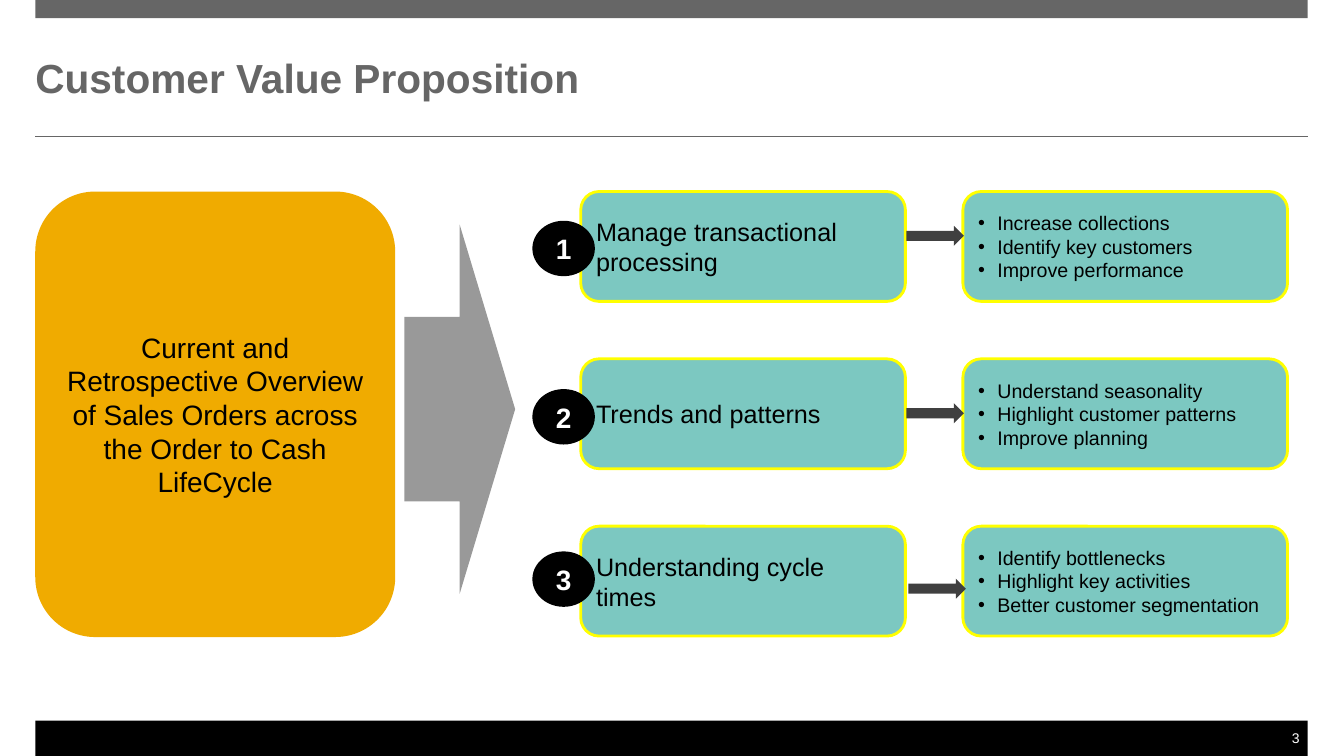
from dataclasses import dataclass

from lxml.etree import SubElement
from pptx import Presentation
from pptx.dml.color import RGBColor
from pptx.enum.shapes import MSO_CONNECTOR, MSO_SHAPE
from pptx.enum.text import MSO_ANCHOR, PP_ALIGN
from pptx.oxml.ns import qn
from pptx.shapes.autoshape import Shape
from pptx.slide import Slide
from pptx.util import Inches, Pt

GREY, BLACK, WHITE = "666666", "000000", "FFFFFF"
ORANGE, TEAL, YELLOW = "F0AB00", "7CC8C1", "FFFF00"
ARROW_GREY, DARK_GREY = "999999", "404040"

MARGIN_LEFT, CONTENT_WIDTH = 0.35, 12.62
FIRST_ROW_TOP, ROW_STEP = 1.9, 1.66
BOX_WIDTH, BOX_HEIGHT = 3.22, 1.09
TOPIC_LEFT, BENEFIT_LEFT = 5.76, 9.55
BULLET_INDENT = 0.19


@dataclass(frozen=True)
class Box:
    left: float
    top: float
    width: float
    height: float

    def lengths(self) -> list[int]:
        return [Inches(value) for value in (self.left, self.top, self.width, self.height)]


@dataclass(frozen=True)
class TextStyle:
    size: float
    color: str = BLACK
    bold: bool = False
    alignment: PP_ALIGN = PP_ALIGN.LEFT
    bulleted: bool = False


@dataclass(frozen=True)
class Proposition:
    topic: str
    benefits: tuple[str, ...]
    badge_top: float
    arrow_left: float
    arrow_top: float


PROPOSITIONS = (
    Proposition(
        "Manage transactional processing",
        ("Increase collections", "Identify key customers", "Improve performance"),
        2.19, 8.99, 2.24,
    ),
    Proposition(
        "Trends and patterns",
        ("Understand seasonality", "Highlight customer patterns", "Improve planning"),
        3.86, 8.99, 4.0,
    ),
    Proposition(
        "Understanding cycle times",
        ("Identify bottlenecks", "Highlight key activities", "Better customer segmentation"),
        5.47, 9.01, 5.74,
    ),
)

TITLE_STYLE = TextStyle(29, GREY, bold=True)
OVERVIEW_STYLE = TextStyle(20, alignment=PP_ALIGN.CENTER)
TOPIC_STYLE = TextStyle(18)
BENEFIT_STYLE = TextStyle(14, bulleted=True)
BADGE_STYLE = TextStyle(20, WHITE, bold=True, alignment=PP_ALIGN.CENTER)
PAGE_NUMBER_STYLE = TextStyle(10, WHITE, alignment=PP_ALIGN.RIGHT)


def rgb(color: str) -> RGBColor:
    return RGBColor.from_string(color)


def set_attributes(target: object, values: dict[str, object]) -> None:
    for name, value in values.items():
        setattr(target, name, value)


def add_bullet(paragraph) -> None:
    properties = paragraph._p.get_or_add_pPr()
    properties.set("marL", str(Inches(BULLET_INDENT)))
    properties.set("indent", str(-Inches(BULLET_INDENT)))
    SubElement(properties, qn("a:buFont")).set("typeface", "Arial")
    SubElement(properties, qn("a:buChar")).set("char", "•")


def write_text(shape: Shape, lines: tuple[str, ...], style: TextStyle,
               margins: tuple[float, float, float, float] = (0.1, 0.05, 0.1, 0.05)) -> None:
    """Fill the shape with one paragraph per line; margins run left, top, right, bottom."""
    frame = shape.text_frame
    left, top, right, bottom = (Inches(margin) for margin in margins)
    set_attributes(frame, {
        "word_wrap": True, "vertical_anchor": MSO_ANCHOR.MIDDLE,
        "margin_left": left, "margin_top": top,
        "margin_right": right, "margin_bottom": bottom,
    })
    for index, line in enumerate(lines):
        paragraph = frame.add_paragraph() if index else frame.paragraphs[0]
        paragraph.alignment = style.alignment
        if style.bulleted:
            add_bullet(paragraph)
        run = paragraph.add_run()
        run.text = line
        set_attributes(run.font, {"name": "Arial", "size": Pt(style.size), "bold": style.bold})
        run.font.color.rgb = rgb(style.color)


def add_filled_shape(slide: Slide, kind: MSO_SHAPE, box: Box, fill: str,
                     outline: str | None = None) -> Shape:
    shape = slide.shapes.add_shape(kind, *box.lengths())
    shape.shadow.inherit = False
    shape.fill.solid()
    shape.fill.fore_color.rgb = rgb(fill)
    if outline:
        shape.line.color.rgb = rgb(outline)
        shape.line.width = Pt(2)
    else:
        shape.line.fill.background()
    return shape


def add_frame(slide: Slide) -> None:
    """Draw the top band, title, rule, footer and page number."""
    for top, height, color in ((0, 0.18, GREY), (7.15, 0.35, BLACK)):
        add_filled_shape(slide, MSO_SHAPE.RECTANGLE,
                         Box(MARGIN_LEFT, top, CONTENT_WIDTH, height), color)
    rule = slide.shapes.add_connector(
        MSO_CONNECTOR.STRAIGHT, Inches(MARGIN_LEFT), Inches(1.35),
        Inches(MARGIN_LEFT + CONTENT_WIDTH), Inches(1.35))
    rule.line.color.rgb = rgb(GREY)
    rule.line.width = Pt(0.5)
    SubElement(rule._element.spPr, qn("a:effectLst"))

    title = slide.shapes.add_textbox(*Box(MARGIN_LEFT, 0.35, CONTENT_WIDTH, 0.83).lengths())
    write_text(title, ("Customer Value Proposition",), TITLE_STYLE, (0, 0, 0, 0))
    page_number = slide.shapes.add_textbox(*Box(12.71, 7.24, 0.27, 0.17).lengths())
    write_text(page_number, ("3",), PAGE_NUMBER_STYLE, (0, 0, 0.09, 0))


def add_overview(slide: Slide) -> None:
    overview = add_filled_shape(slide, MSO_SHAPE.ROUNDED_RECTANGLE,
                                Box(MARGIN_LEFT, FIRST_ROW_TOP, 3.57, 4.42), ORANGE)
    text = "Current and Retrospective Overview of Sales Orders across the Order to Cash LifeCycle"
    write_text(overview, (text,), OVERVIEW_STYLE, (0.1, 0.08, 0.1, 0.08))
    add_filled_shape(slide, MSO_SHAPE.RIGHT_ARROW, Box(4.01, 2.23, 1.1, 3.66), ARROW_GREY)


def add_proposition(slide: Slide, number: int, proposition: Proposition) -> None:
    top = FIRST_ROW_TOP + (number - 1) * ROW_STEP
    for left, lines, style in (
        (TOPIC_LEFT, (proposition.topic,), TOPIC_STYLE),
        (BENEFIT_LEFT, proposition.benefits, BENEFIT_STYLE),
    ):
        card = add_filled_shape(slide, MSO_SHAPE.ROUNDED_RECTANGLE,
                                Box(left, top, BOX_WIDTH, BOX_HEIGHT), TEAL, YELLOW)
        write_text(card, lines, style)
    add_filled_shape(slide, MSO_SHAPE.RIGHT_ARROW,
                     Box(proposition.arrow_left, proposition.arrow_top, 0.57, 0.2), DARK_GREY)
    badge = add_filled_shape(slide, MSO_SHAPE.OVAL,
                             Box(5.28, proposition.badge_top, 0.62, 0.55), BLACK)
    write_text(badge, (str(number),), BADGE_STYLE, (0.1, 0.08, 0.1, 0.08))


def main() -> None:
    presentation = Presentation()
    set_attributes(presentation, {"slide_width": Inches(13.33), "slide_height": Inches(7.5)})
    slide = presentation.slides.add_slide(presentation.slide_layouts[6])
    add_frame(slide)
    add_overview(slide)
    for number, proposition in enumerate(PROPOSITIONS, start=1):
        add_proposition(slide, number, proposition)
    presentation.save("out.pptx")


if __name__ == "__main__":
    main()
